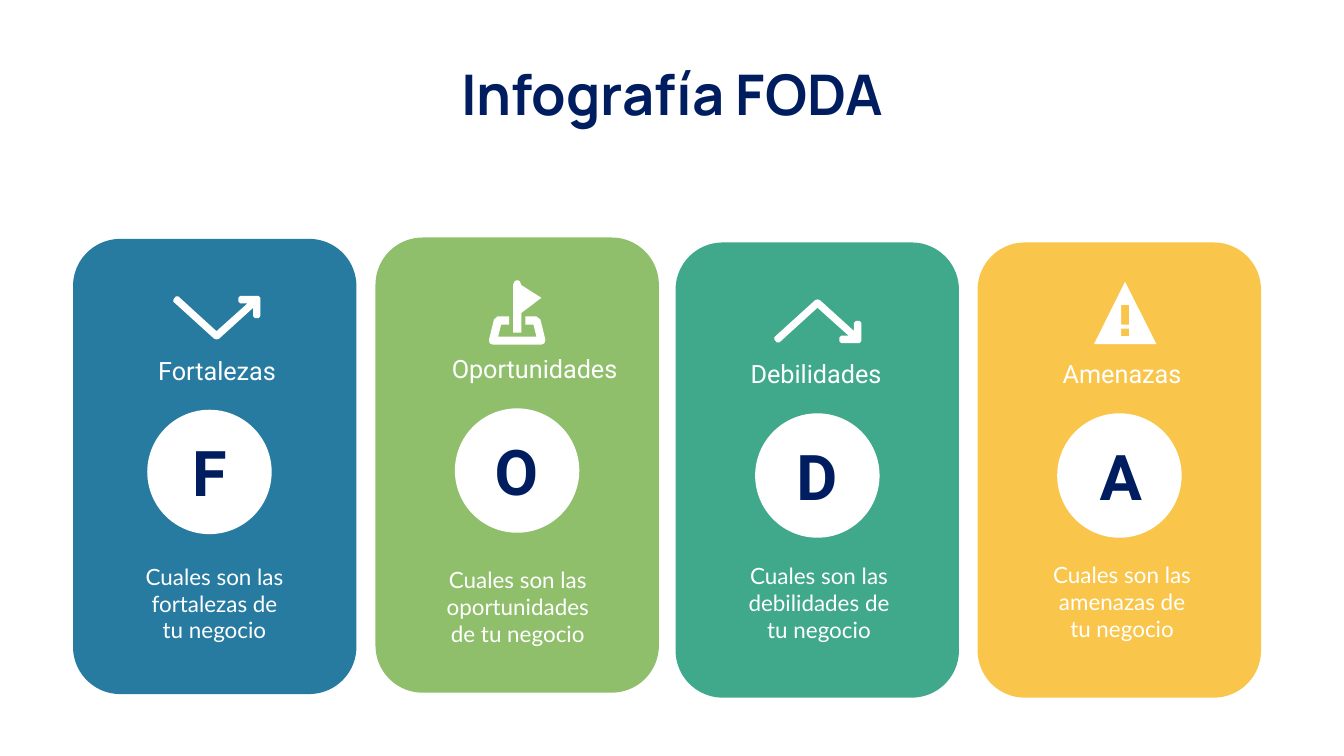
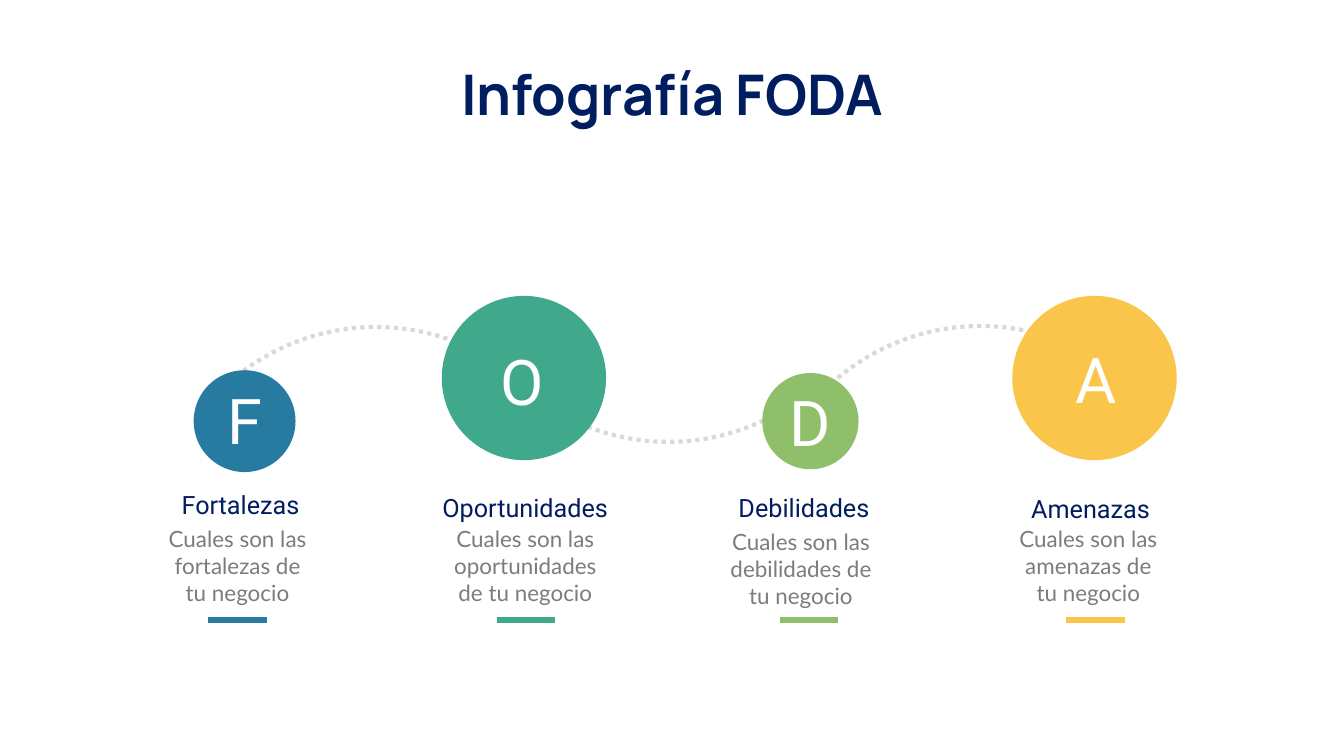
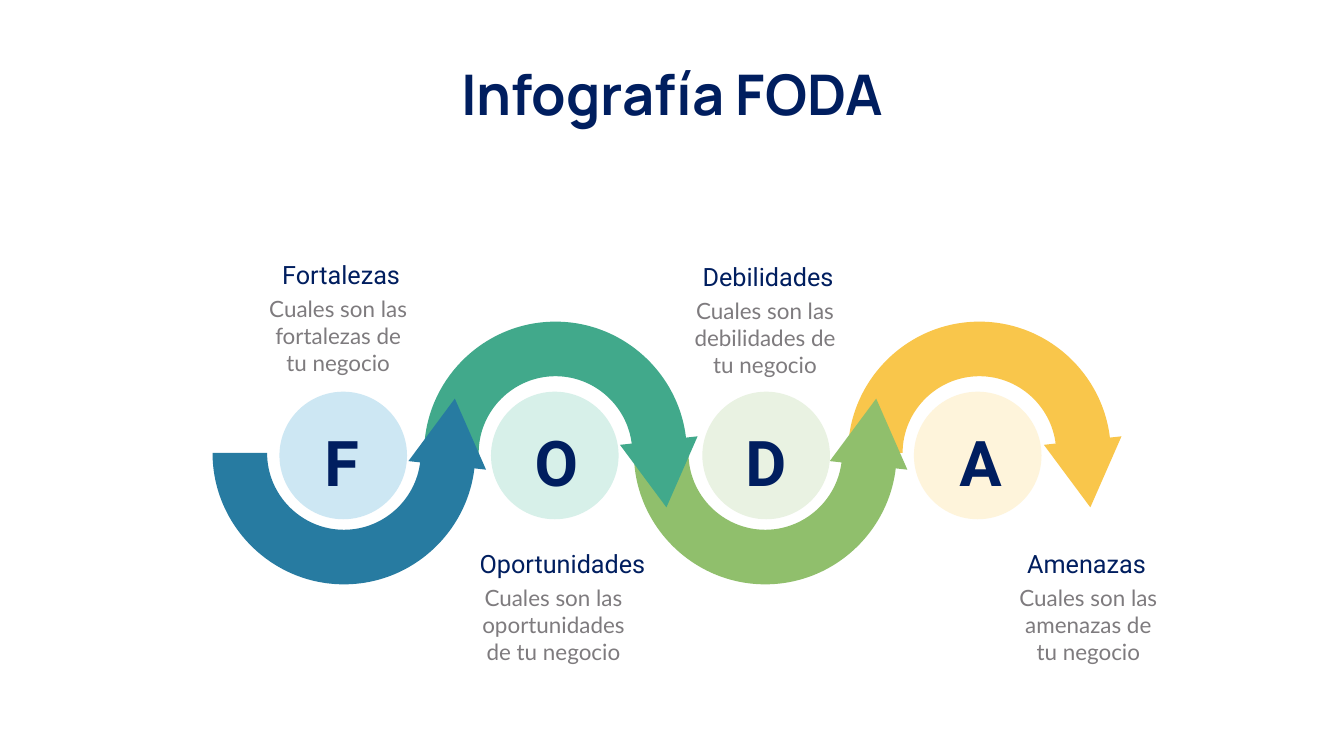
from dataclasses import dataclass

from lxml.etree import Element, SubElement
from pptx import Presentation
from pptx.dml.color import RGBColor
from pptx.enum.dml import MSO_LINE
from pptx.enum.shapes import MSO_CONNECTOR, MSO_SHAPE
from pptx.enum.text import MSO_AUTO_SIZE as AutoSize, PP_ALIGN
from pptx.oxml.ns import qn
from pptx.shapes.shapetree import GroupShapes, SlideShapes
from pptx.slide import Slide
from pptx.util import Cm, Pt

Point = tuple[float, float]

NAVY = RGBColor(0x00, 0x1E, 0x5F)
WHITE = RGBColor(0xFF, 0xFF, 0xFF)
GRAY = RGBColor(0x7E, 0x7B, 0x7E)
DOTS = RGBColor(0xD9, 0xD9, 0xD9)
BLUE = RGBColor(0x27, 0x7B, 0xA1)
TEAL = RGBColor(0x41, 0xA9, 0x8B)
GREEN = RGBColor(0x90, 0xBF, 0x6C)
YELLOW = RGBColor(0xF9, 0xC6, 0x4B)
PALE_BLUE = RGBColor(0xCD, 0xE7, 0xF3)
PALE_TEAL = RGBColor(0xD7, 0xF0, 0xE9)
PALE_GREEN = RGBColor(0xE9, 0xF2, 0xE2)
PALE_YELLOW = RGBColor(0xFE, 0xF4, 0xDB)

NAME_WIDTH = 8.28
WIDE_NAME = 8.89

TREND = [
    (4.32, 0), (3.4, 0), (3.3, 0.1), (3.3, 0.28), (3.4, 0.38), (3.76, 0.38), (2.2, 1.78),
    (0.28, 0.03), (0.15, 0.03), (0.03, 0.18), (0.03, 0.3), (2.08, 2.16), (2.2, 2.2),
    (2.33, 2.16), (4.04, 0.61), (4.04, 1.02), (4.14, 1.12), (4.32, 1.12), (4.41, 1.02),
    (4.41, 0.1),
]
GOAL_BASE = [
    (2.84, 1.17), (2.59, 0.15), (2.39, 0), (1.83, 0), (1.83, 0.41), (2.24, 0.41),
    (2.39, 1.02), (0.46, 1.02), (0.61, 0.41), (1.02, 0.41), (1.02, 0), (0.43, 0),
    (0.25, 0.15), (0, 1.17), (0.03, 1.35), (0.2, 1.42), (2.64, 1.42), (2.79, 1.35),
]
GOAL_FLAG = [
    (0.41, 1.65), (1.42, 0.89), (0.41, 0.25), (0.33, 0.05), (0.2, 0), (0.08, 0.05),
    (0, 0.2), (0, 2.64), (0.41, 2.64),
]
WARNING = [(1.57, 0), (0, 3.15), (3.15, 3.15)]
WARNING_DOT = [(1.37, 2.36), (1.78, 2.36), (1.78, 2.74), (1.37, 2.74)]
WARNING_BAR = [(1.37, 1.17), (1.78, 1.17), (1.78, 2.16), (1.37, 2.16)]
ARROWHEAD = [(5.59, 2.74), (3.25, -0.41), (7.16, -0.84)]
RING_CURVES = (0, 3, 7, 10)


@dataclass(frozen=True)
class Topic:
    """One of the four parts of the analysis."""

    letter: str
    name: str
    question: str


@dataclass(frozen=True)
class Panel:
    """A rounded panel of the first slide."""

    color: RGBColor
    left: float
    top: float
    disc_left: float
    letter_left: float
    name_left: float
    name_width: float
    question_at: Point


@dataclass(frozen=True)
class Stop:
    """A disc on the dotted route of the second slide."""

    color: RGBColor
    disc_at: Point
    disc_size: float
    letter_at: Point
    bar_left: float
    name_at: Point
    name_width: float
    question_at: Point


@dataclass(frozen=True)
class Wave:
    """A half ring with its disc on the third slide."""

    color: RGBColor
    pale: RGBColor
    center_x: float
    direction: int
    disc_left: float
    letter_left: float
    name_at: Point
    name_width: float
    question_at: Point


TOPICS = [
    Topic("F", "Fortalezas", "Cuales son las fortalezas de tu negocio"),
    Topic("O", "Oportunidades", "Cuales son las oportunidades de tu negocio"),
    Topic("D", "Debilidades", "Cuales son las debilidades de tu negocio"),
    Topic("A", "Amenazas", "Cuales son las amenazas de tu negocio"),
]
PANELS = [
    Panel(BLUE, 3.68, 12.04, 7.42, 8.71, 6.8, NAME_WIDTH, (6.82, 28.24)),
    Panel(GREEN, 18.92, 11.97, 22.92, 24.18, 21.95, 9.98, (22.1, 28.4)),
    Panel(TEAL, 34.04, 12.22, 38.05, 39.32, 36.98, NAME_WIDTH, (37.28, 28.22)),
    Panel(YELLOW, 49.26, 12.22, 53.27, 54.64, 52.4, NAME_WIDTH, (52.55, 28.17)),
]
STOPS = [
    Stop(BLUE, (9.9, 18.8), 4.85, (10.49, 19.08), 10.49, (7.98, 24.54), NAME_WIDTH, (7.98, 26.34)),
    Stop(TEAL, (22.26, 14.91), 8.28, (24.48, 17.12), 25.02, (22.02, 24.69), WIDE_NAME, (22.48, 26.33)),
    Stop(GREEN, (38.41, 18.8), 4.85, (38.99, 19.21), 39.29, (36.37, 24.69), NAME_WIDTH, (36.37, 26.49)),
    Stop(YELLOW, (51.01, 14.91), 8.28, (53.39, 17.04), 53.72, (50.81, 24.72), NAME_WIDTH, (50.85, 26.33)),
]
WAVES = [
    Wave(BLUE, PALE_BLUE, 17.33, -1, 14.08, 15.37, (13.05, 12.95), NAME_WIDTH, (13.05, 14.76)),
    Wave(TEAL, PALE_TEAL, 27.99, 1, 24.74, 26.19, (23.9, 27.51), WIDE_NAME, (23.9, 29.31)),
    Wave(GREEN, PALE_GREEN, 38.56, -1, 35.39, 36.75, (34.56, 13.03), NAME_WIDTH, (34.56, 14.85)),
    Wave(YELLOW, PALE_YELLOW, 49.35, 1, 46.05, 47.57, (50.61, 27.51), NAME_WIDTH, (50.85, 29.31)),
]


def add_text(slide: Slide, text: str, at: Point, size: Point, *, points: float, font: str,
             color: RGBColor, bold: bool = False, wrap: bool = True) -> None:
    """Write one centred paragraph in a text box."""
    box = slide.shapes.add_textbox(*map(Cm, at + size))
    frame = box.text_frame
    frame.word_wrap = wrap
    frame.auto_size = AutoSize.SHAPE_TO_FIT_TEXT
    paragraph = frame.paragraphs[0]
    paragraph.alignment = PP_ALIGN.CENTER
    run = paragraph.add_run()
    run.text = text
    run.font.size = Pt(points)
    run.font.name = font
    run.font.bold = bold
    run.font.color.rgb = color


def add_title(slide: Slide) -> None:
    """Write the title that all slides share."""
    add_text(slide, "Infografía FODA", (22.07, 2.9), (23.6, 3.68), points=80, font="Manrope",
             color=NAVY, bold=True, wrap=False)


def add_letter(slide: Slide, topic: Topic, at: Point, color: RGBColor, bold: bool) -> None:
    """Write the initial of a topic."""
    add_text(slide, topic.letter, at, (3.68, 4.11), points=90, font="Roboto", color=color, bold=bold)


def add_name(slide: Slide, topic: Topic, at: Point, width: float, color: RGBColor) -> None:
    """Write the name of a topic."""
    add_text(slide, topic.name, at, (width, 1.8), points=36, font="Roboto", color=color)


def add_question(slide: Slide, topic: Topic, at: Point, color: RGBColor) -> None:
    """Write the question of a topic."""
    add_text(slide, topic.question, at, (7.98, 4.37), points=32, font="Lato", color=color)


def add_filled(slide: Slide, preset: MSO_SHAPE, at: Point, size: Point, color: RGBColor,
               outline: float = 0) -> None:
    """Draw a flat preset shape."""
    shape = slide.shapes.add_shape(preset, *map(Cm, at + size))
    shape.shadow.inherit = False
    shape.fill.solid()
    shape.fill.fore_color.rgb = color
    if outline:
        shape.line.color.rgb = color
        shape.line.width = Pt(outline)
    else:
        shape.line.fill.background()


def add_outline(shapes: SlideShapes | GroupShapes, at: Point, color: RGBColor,
                *contours: list[Point], curves: tuple[int, ...] = ()) -> None:
    """Draw closed contours as one flat shape, with curves from the given segments on."""
    placed = [[(Cm(at[0] + x), Cm(at[1] + y)) for x, y in contour] for contour in contours]
    builder = shapes.build_freeform(*placed[0][0])
    for index, contour in enumerate(placed):
        if index:
            builder.move_to(*contour[0])
        builder.add_line_segments(contour[1:], close=True)
    shape = builder.convert_to_shape()
    shape.shadow.inherit = False
    shape.fill.solid()
    shape.fill.fore_color.rgb = color
    shape.line.fill.background()
    segments = list(shape.element.iter(qn("a:lnTo")))
    for start in curves:
        curve = Element(qn("a:cubicBezTo"))
        segments[start].addprevious(curve)
        for segment in segments[start:start + 3]:
            curve.append(segment[0])
            segment.getparent().remove(segment)


def add_dotted_arc(slide: Slide, at: Point, rotation: float,
                   angles: tuple[float, ...] = ()) -> None:
    """Draw one dotted arc of the route."""
    arc = slide.shapes.add_shape(MSO_SHAPE.ARC, *map(Cm, at + (22.35, 22.35)))
    arc.shadow.inherit = False
    arc.rotation = rotation
    for index, angle in enumerate(angles):
        arc.adjustments[index] = angle
    arc.fill.background()
    arc.line.color.rgb = DOTS
    arc.line.width = Pt(6)
    arc.line.dash_style = MSO_LINE.ROUND_DOT


def add_bar(slide: Slide, left: float, color: RGBColor) -> None:
    """Draw the short line below a question."""
    top = Cm(31.26)
    bar = slide.shapes.add_connector(MSO_CONNECTOR.STRAIGHT, Cm(left), top, Cm(left + 2.95), top)
    bar.line.color.rgb = color
    bar.line.width = Pt(8)
    SubElement(bar.element.spPr, qn("a:effectLst"))


def mirror(points: list[Point], height: float = 0) -> list[Point]:
    """Turn points upside down within a height."""
    return [(x, height - y) for x, y in points]


def half_circle(radius: float) -> list[Point]:
    """Return the end and control points of an upper half circle, from right to left."""
    pull = 0.55 * radius
    return [(radius, 0), (radius, -pull), (pull, -radius), (0, -radius),
            (-pull, -radius), (-radius, -pull), (-radius, 0)]


def build_panels(slide: Slide) -> None:
    """Build the slide with four panels."""
    pairs = [(TOPICS[index], PANELS[index]) for index in (0, 2, 1, 3)]
    for _, panel in pairs:
        add_filled(slide, MSO_SHAPE.ROUNDED_RECTANGLE, (panel.left, panel.top), (14.28, 22.94), panel.color)
    for _, panel in pairs:
        add_filled(slide, MSO_SHAPE.OVAL, (panel.disc_left, panel.top + 8.61), (6.27, 6.27), WHITE)
    for topic, panel in pairs:
        add_letter(slide, topic, (panel.letter_left, panel.top + 9.7), NAVY, True)
    for topic, panel in pairs:
        add_name(slide, topic, (panel.name_left, panel.top + 5.72), panel.name_width, WHITE)
    add_outline(slide.shapes, (8.71, 14.91), WHITE, TREND)
    add_outline(slide.shapes, (38.99, 15.09), WHITE, mirror(TREND, 2.2))
    goal = slide.shapes.add_group_shape()
    add_outline(goal.shapes, (24.64, 15.95), WHITE, GOAL_BASE)
    add_outline(goal.shapes, (25.86, 14.12), WHITE, GOAL_FLAG)
    add_outline(slide.shapes, (55.12, 14.2), WHITE, WARNING, WARNING_DOT, WARNING_BAR)
    add_title(slide)
    for topic, panel in zip(TOPICS, PANELS):
        add_question(slide, topic, panel.question_at, WHITE)


def build_route(slide: Slide) -> None:
    """Build the slide with discs on a dotted route."""
    add_dotted_arc(slide, (38.23, 16.43), 333.6, (152.54, 207.28))
    add_dotted_arc(slide, (22.5, -0.08), 135)
    add_dotted_arc(slide, (7.77, 16.48), 305.4, (170.15, 0))
    for stop in reversed(STOPS):
        add_filled(slide, MSO_SHAPE.OVAL, stop.disc_at, (stop.disc_size, stop.disc_size), stop.color,
                   outline=8 if stop.color == BLUE else 0)
    for topic, stop in zip(TOPICS, STOPS):
        add_letter(slide, topic, stop.letter_at, WHITE, False)
    for stop in STOPS:
        add_bar(slide, stop.bar_left, stop.color)
    add_title(slide)
    for topic, stop in zip(TOPICS, STOPS):
        add_question(slide, topic, stop.question_at, GRAY)
        add_name(slide, topic, stop.name_at, stop.name_width, NAVY)


def build_wave(slide: Slide) -> None:
    """Build the slide with a wave of arrows."""
    ring = half_circle(6.62) + half_circle(3.87)[::-1]
    for wave in reversed(WAVES):
        add_filled(slide, MSO_SHAPE.OVAL, (wave.disc_left, 19.74), (6.43, 6.43), wave.pale)
    for wave in reversed(WAVES):
        for outline, curves in ((ring, RING_CURVES), (ARROWHEAD, ())):
            turned = outline if wave.direction > 0 else mirror(outline)
            add_outline(slide.shapes, (wave.center_x, 22.83), wave.color, turned, curves=curves)
    for topic, wave in zip(TOPICS, WAVES):
        add_letter(slide, topic, (wave.letter_left, 21.23), NAVY, True)
    for topic, wave in zip(TOPICS, WAVES):
        add_question(slide, topic, wave.question_at, GRAY)
        add_name(slide, topic, wave.name_at, wave.name_width, NAVY)
    add_title(slide)


def main() -> None:
    """Build and save the presentation."""
    deck = Presentation()
    deck.slide_width, deck.slide_height = Cm(67.72), Cm(38.1)
    for build in (build_panels, build_route, build_wave):
        build(deck.slides.add_slide(deck.slide_layouts[6]))
    deck.save("out.pptx")


if __name__ == "__main__":
    main()
